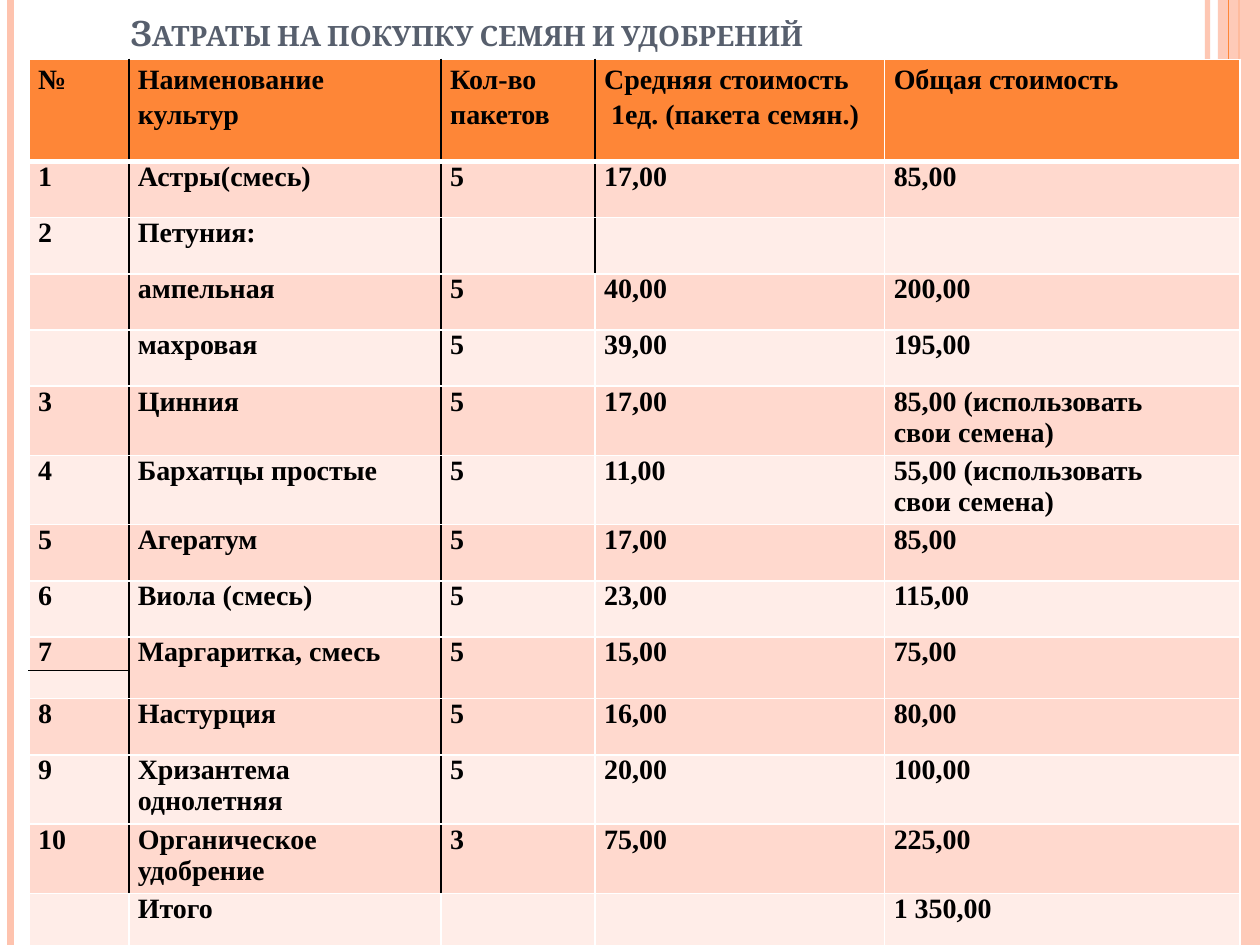
from lxml import etree
from pptx import Presentation
from pptx.dml.color import RGBColor
from pptx.enum.shapes import MSO_CONNECTOR, MSO_SHAPE
from pptx.enum.text import MSO_ANCHOR, PP_ALIGN
from pptx.oxml.ns import qn
from pptx.util import Pt

STRAIGHT = MSO_CONNECTOR.STRAIGHT
RECTANGLE = MSO_SHAPE.RECTANGLE
BOTTOM = MSO_ANCHOR.BOTTOM
LEFT, JUSTIFY = PP_ALIGN.LEFT, PP_ALIGN.JUSTIFY

COLORS = {
    "orange": "FE8637", "peach": "FEC3AE", "slate": "575F6D",
    "odd": "FFD9CE", "even": "FFEDE8", "black": "000000", "white": "FFFFFF",
}
SLIDE_WIDTH, SLIDE_HEIGHT = 720, 540

TITLE = "Затраты на покупку семян и удобрений"
TITLE_FORMAT = {"name": "Cambria", "size": Pt(20), "bold": True}
CELL_FORMAT = {"name": "Times New Roman", "size": Pt(16), "bold": True}
CELL_MARGINS = {"margin_left": Pt(5.2), "margin_right": Pt(5.2),
                "margin_top": 0, "margin_bottom": 0}
EMPTY_CELL_SIZE = 12

# x, width, colour, opacity in percent
STRIPES = [
    (690, 3, "peach", 93),
    (6, 4.5, "peach", 100),
    (708, 1.5, "orange", 100),
    (702, 0.75, "orange", 100),
]
BAND_LEFT, BAND_OPACITY = 696, 87

TABLE_LEFT, TABLE_TOP = 16.6, 34
COLUMN_WIDTHS = [57, 178.5, 88, 165.5, 203]
HEADER, SINGLE, DOUBLE, HALF = 58.3, 32.1, 39.6, 16
ROWS = [
    (HEADER, ["№", "Наименование культур", "Кол-во\nпакетов",
              "Средняя стоимость\n 1ед. (пакета семян.)", "Общая стоимость"]),
    (SINGLE, ["1", "Астры(смесь)", "5", "17,00", "85,00"]),
    (SINGLE, ["2", "Петуния:", "", "", ""]),
    (SINGLE, ["", "ампельная", "5", "40,00", "200,00"]),
    (SINGLE, ["", "махровая", "5", "39,00", "195,00"]),
    (DOUBLE, ["3", "Цинния", "5", "17,00", "85,00 (использовать\nсвои семена)"]),
    (DOUBLE, ["4", "Бархатцы простые", "5", "11,00",
              "55,00 (использовать\nсвои семена)"]),
    (SINGLE, ["5", "Агератум", "5", "17,00", "85,00"]),
    (SINGLE, ["6", "Виола (смесь)", "5", "23,00", "115,00"]),
    (HALF, ["7", "Маргаритка, смесь", "5", "15,00", "75,00"]),
    (HALF, ["", "", "", "", ""]),
    (SINGLE, ["8", "Настурция", "5", "16,00", "80,00"]),
    (DOUBLE, ["9", "Хризантема однолетняя", "5", "20,00", "100,00"]),
    (DOUBLE, ["10", "Органическое удобрение", "3", "75,00", "225,00"]),
    (SINGLE, ["", "Итого", "", "", "1 350,00"]),
]
SPLIT_ROW = 9
# column -> number of rows with a black line on its right side
BLACK_RIGHT = {0: 14, 1: 14, 2: 3}


def rgb(name):
    return RGBColor.from_string(COLORS[name])


def apply(target, values):
    for name, value in values.items():
        setattr(target, name, value)


def set_opacity(element, percent):
    if percent < 100:
        color = next(element.iter(qn("a:srgbClr")))
        etree.SubElement(color, qn("a:alpha"), val=str(percent * 1000))


def add_stripe(slide, x, width, color, opacity):
    stripe = slide.shapes.add_connector(STRAIGHT, Pt(x), 0, Pt(x), Pt(SLIDE_HEIGHT))
    stripe.line.width = Pt(width)
    stripe.line.color.rgb = rgb(color)
    properties = stripe.element.spPr
    set_opacity(properties, opacity)
    etree.SubElement(properties, qn("a:effectLst"))


def add_band(slide):
    band = slide.shapes.add_shape(RECTANGLE, Pt(BAND_LEFT), 0,
                                  Pt(SLIDE_WIDTH - BAND_LEFT), Pt(SLIDE_HEIGHT))
    band.shadow.inherit = False
    band.fill.solid()
    band.fill.fore_color.rgb = rgb("peach")
    band.line.fill.background()
    set_opacity(band.element.spPr, BAND_OPACITY)


def add_title(slide):
    frame = slide.shapes.add_textbox(Pt(36), 0, Pt(588), Pt(34)).text_frame
    apply(frame, {"word_wrap": True, "vertical_anchor": BOTTOM, "margin_left": Pt(38.5)})
    run = frame.paragraphs[0].add_run()
    run.text = TITLE
    apply(run.font, TITLE_FORMAT)
    run.font.color.rgb = rgb("slate")
    run.font._element.set("cap", "small")


def cell_borders(row, column):
    """Return colour and width of each side, in schema order."""
    def vertical(edge):
        return ("black" if row < BLACK_RIGHT.get(edge, 0) else "white", 1)

    def horizontal(edge):
        if edge == SPLIT_ROW and column == 0:
            return ("black", 1)
        return ("white", 3 if edge == 0 else 1)

    return {"a:lnL": vertical(column - 1), "a:lnR": vertical(column),
            "a:lnT": horizontal(row - 1), "a:lnB": horizontal(row)}


def draw_borders(cell, borders):
    properties = cell._tc.get_or_add_tcPr()
    for tag, (color, width) in borders.items():
        line = etree.SubElement(properties, qn(tag), w=str(Pt(width)))
        fill = etree.SubElement(line, qn("a:solidFill"))
        etree.SubElement(fill, qn("a:srgbClr"), val=COLORS[color])


def fill_cell(cell, text, row, column):
    apply(cell, CELL_MARGINS)
    draw_borders(cell, cell_borders(row, column))
    cell.fill.solid()
    cell.fill.fore_color.rgb = rgb("orange" if row == 0 else "odd" if row % 2 else "even")
    if not text:
        etree.SubElement(cell.text_frame.paragraphs[0]._p, qn("a:endParaRPr"),
                         sz=str(EMPTY_CELL_SIZE * 100))
        return
    cell.text_frame.text = text
    for paragraph in cell.text_frame.paragraphs:
        paragraph.alignment = LEFT if column == len(COLUMN_WIDTHS) - 1 else JUSTIFY
        if row == 0:
            paragraph.line_spacing = 1.15
        for run in paragraph.runs:
            apply(run.font, CELL_FORMAT)
            run.font.color.rgb = rgb("black")


def add_cost_table(slide):
    heights = [height for height, _ in ROWS]
    table = slide.shapes.add_table(
        len(ROWS), len(COLUMN_WIDTHS), Pt(TABLE_LEFT), Pt(TABLE_TOP),
        Pt(sum(COLUMN_WIDTHS)), Pt(sum(heights))).table
    apply(table, {"first_row": False, "horz_banding": False})
    for column, width in enumerate(COLUMN_WIDTHS):
        table.columns[column].width = Pt(width)
    for row, (height, texts) in enumerate(ROWS):
        table.rows[row].height = Pt(height)
        for column, text in enumerate(texts):
            fill_cell(table.cell(row, column), text, row, column)
    for column in range(1, len(COLUMN_WIDTHS)):
        table.cell(SPLIT_ROW, column).merge(table.cell(SPLIT_ROW + 1, column))


def main():
    presentation = Presentation()
    apply(presentation, {"slide_width": Pt(SLIDE_WIDTH), "slide_height": Pt(SLIDE_HEIGHT)})
    slide = presentation.slides.add_slide(presentation.slide_layouts[6])
    for stripe in STRIPES[:3]:
        add_stripe(slide, *stripe)
    add_band(slide)
    add_stripe(slide, *STRIPES[3])
    add_title(slide)
    add_cost_table(slide)
    presentation.save("out.pptx")


if __name__ == "__main__":
    main()
